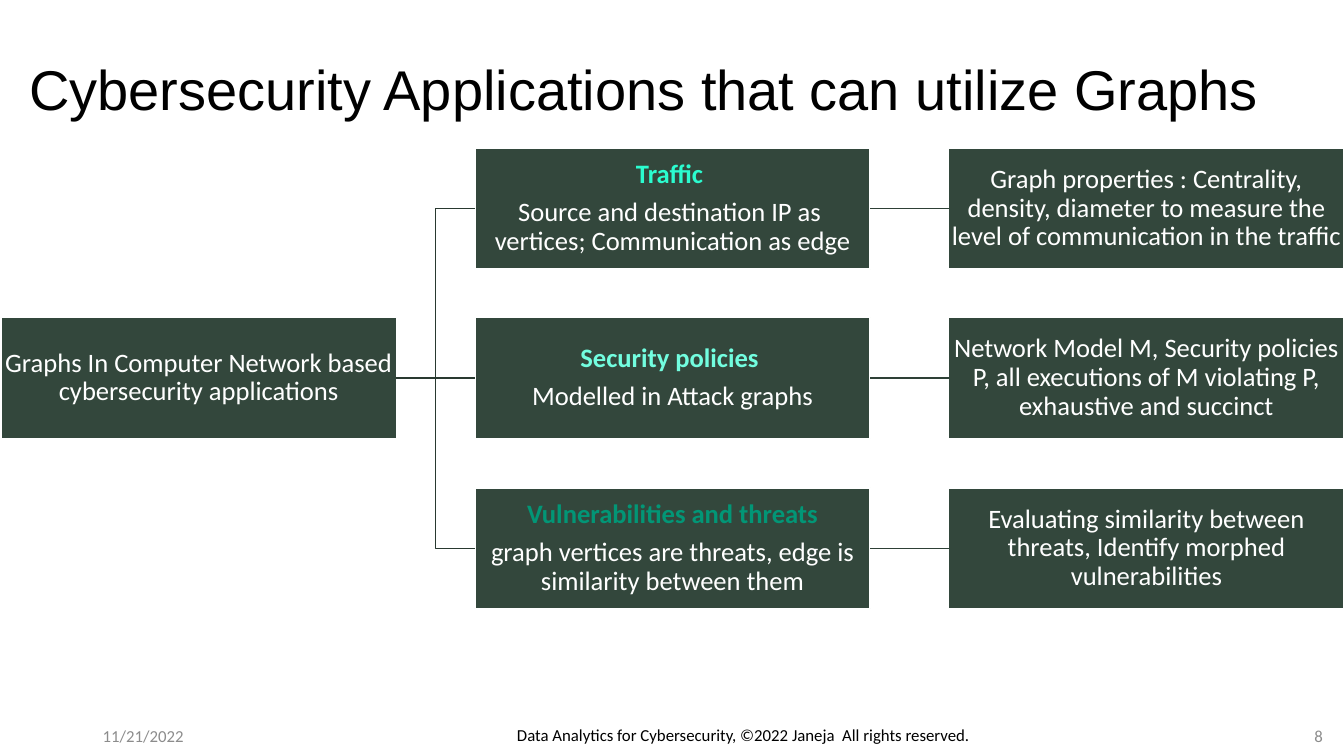
from pptx import Presentation
from pptx.dml.color import RGBColor
from pptx.enum.shapes import MSO_CONNECTOR, MSO_SHAPE
from pptx.enum.text import MSO_ANCHOR, PP_ALIGN
from pptx.oxml.ns import qn
from pptx.util import Pt
from lxml import etree

PX = 9144  # 100 px to the inch
WHITE = RGBColor(0xFF, 0xFF, 0xFF)
BLACK = RGBColor(0, 0, 0)
GREY = RGBColor(0x8C, 0x8C, 0x8C)
BOX_GREEN = RGBColor(0x33, 0x47, 0x3C)
BRANCH_LINE = RGBColor(0x29, 0x39, 0x30)
DETAIL_LINE = RGBColor(0x2E, 0x40, 0x36)
MINT = RGBColor(0x2B, 0xFC, 0xCF)
PALE_MINT = RGBColor(0x72, 0xFD, 0xDF)
TEAL = RGBColor(0x02, 0x96, 0x76)

LEFT, CENTER, RIGHT = PP_ALIGN.LEFT, PP_ALIGN.CENTER, PP_ALIGN.RIGHT
MIDDLE, BOTTOM = MSO_ANCHOR.MIDDLE, MSO_ANCHOR.BOTTOM
STRAIGHT, ELBOW = MSO_CONNECTOR.STRAIGHT, MSO_CONNECTOR.ELBOW
RECTANGLE = MSO_SHAPE.RECTANGLE
SIDE_LEFT, SIDE_RIGHT = 1, 3

BOX_W, BOX_H = 392, 120
COL_PITCH, TWO_ROWS = 470, 337

ROOT = "Graphs In Computer Network based cybersecurity applications"
BRANCHES = [
    ("Traffic ", MINT,
     "Source and destination IP as  vertices; Communication as edge",
     "Graph properties : Centrality, density, diameter to measure the level of "
     "communication in the traffic"),
    ("Security policies ", PALE_MINT,
     "Modelled in Attack graphs",
     "Network Model M, Security policies P, all executions of M violating P, "
     "exhaustive and succinct"),
    ("Vulnerabilities and threats", TEAL,
     "graph vertices are threats, edge is similarity between them",
     "Evaluating similarity between threats, Identify morphed vulnerabilities"),
]


class SlideBuilder:
    def __init__(self, slide):
        self.shapes = slide.shapes
        self.box_font, self.box_size = "Calibri", 19

    def format_run(self, p, font, size, color, bold=False):
        f = p.runs[0].font
        f.name, f.size, f.bold = font, Pt(size), bold
        f.color.rgb = color

    def text(self, x, y, w, h, text, size, color, font="Calibri",
             align=LEFT, anchor=MIDDLE, spacing=1.0):
        s = self.shapes.add_textbox(x * PX, y * PX, w * PX, h * PX)
        tf = s.text_frame
        tf.word_wrap = True
        tf.vertical_anchor = anchor
        tf.text = text
        p = tf.paragraphs[0]
        p.alignment, p.line_spacing = align, spacing
        self.format_run(p, font, size, color)

    def box(self, col, row, body, heading=None, heading_color=WHITE):
        x, y = 1 + col * COL_PITCH, 147 + row * TWO_ROWS // 2
        s = self.shapes.add_shape(RECTANGLE, x * PX, y * PX, BOX_W * PX, BOX_H * PX)
        s.shadow.inherit = False
        s.fill.solid()
        s.fill.fore_color.rgb = BOX_GREEN
        s.line.color.rgb = WHITE
        s.line.width = Pt(1)
        tf = s.text_frame
        tf.word_wrap = True
        tf.vertical_anchor = MIDDLE
        tf.margin_left = tf.margin_right = tf.margin_top = tf.margin_bottom = PX
        tf.text = f"{heading}\n{body}" if heading else body
        for p in tf.paragraphs:
            p.alignment, p.line_spacing = CENTER, 0.9
            self.format_run(p, self.box_font, self.box_size, WHITE)
        if heading:
            self.format_run(tf.paragraphs[0], self.box_font, self.box_size,
                            heading_color, bold=True)
            tf.paragraphs[1].space_before = Pt(6.65)
        return s

    def link(self, start, end, color):
        kind = STRAIGHT if start.top == end.top else ELBOW
        c = self.shapes.add_connector(kind, 0, 0, 0, 0)
        c.begin_connect(start, SIDE_RIGHT)
        c.end_connect(end, SIDE_LEFT)
        c.line.color.rgb = color
        c.line.width = Pt(1)
        etree.SubElement(c._element.spPr, qn("a:effectLst"))


def main():
    prs = Presentation()
    prs.slide_width, prs.slide_height = 1333 * PX, 750 * PX
    b = SlideBuilder(prs.slides.add_slide(prs.slide_layouts[6]))

    # Tree of applications
    root = b.box(0, 1, ROOT)
    for row, (heading, color, body, detail) in enumerate(BRANCHES):
        branch = b.box(1, row, body, heading, color)
        leaf = b.box(2, row, detail)
        b.link(root, branch, BRANCH_LINE)
        b.link(branch, leaf, DETAIL_LINE)

    # Title
    b.text(19, 19, 1306, 145, "Cybersecurity Applications that can utilize Graphs",
           40, BLACK, font="Arial", spacing=0.9)

    # Footer
    b.text(92, 710, 101, 40, "11/21/2022", 12, GREY)
    b.text(491, 704, 493, 40,
           "Data Analytics for Cybersecurity, ©2022 Janeja  All rights reserved.",
           12, BLACK, align=CENTER, anchor=BOTTOM)
    b.text(1022, 710, 300, 40, "8", 12, GREY, align=RIGHT)

    prs.save("out.pptx")


if __name__ == "__main__":
    main()
